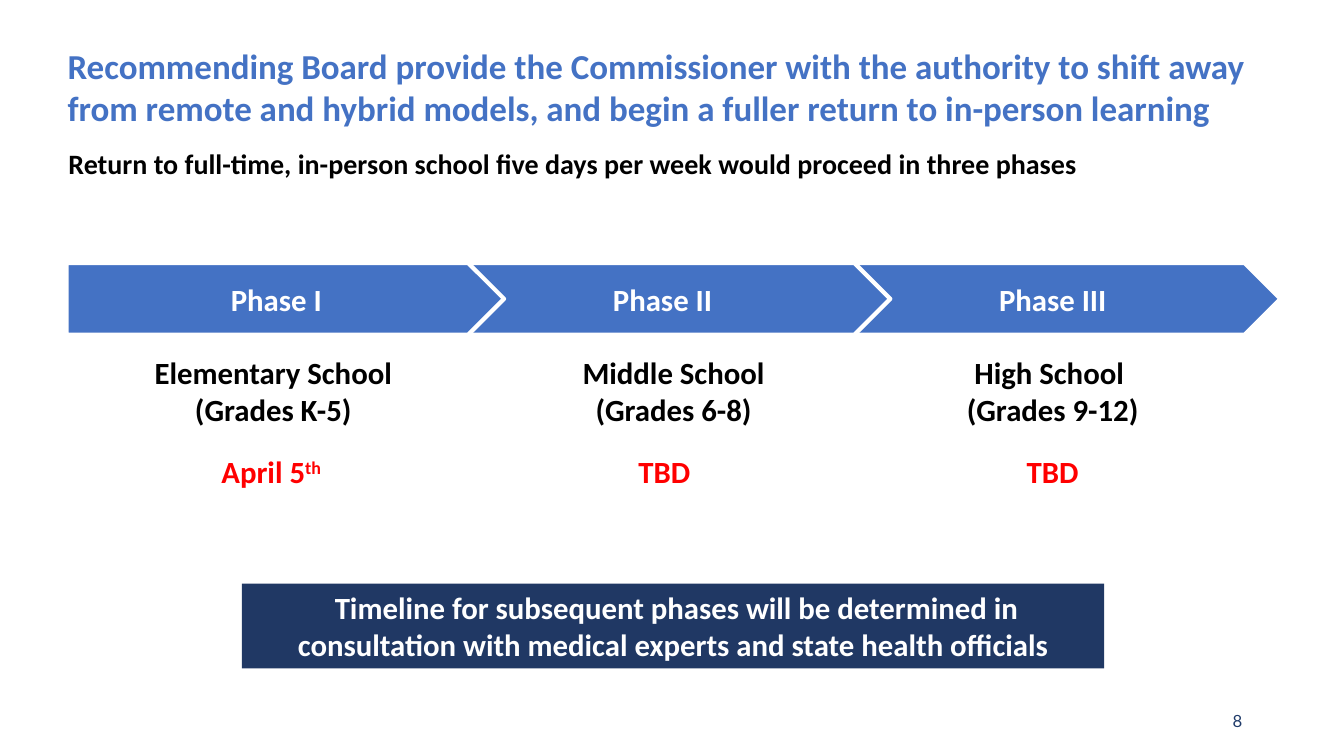
from pptx import Presentation
from pptx.dml.color import RGBColor
from pptx.enum.shapes import MSO_SHAPE
from pptx.enum.text import MSO_ANCHOR, MSO_AUTO_SIZE, PP_ALIGN
from pptx.util import Inches, Pt

TITLE = ("Recommending Board provide the Commissioner with the authority to shift away "
         "from remote and hybrid models, and begin a fuller return to in-person learning")
SUBTITLE = "Return to full-time, in-person school five days per week would proceed in three phases"
# name, arrow left, school text, school centre, date, superscript, date centre
PHASES = [
    ("Phase I", 0.66, "Elementary School (Grades K-5)", 2.71, "April 5", "th ", 2.71),
    ("Phase II", 4.49, "Middle School (Grades 6-8)", 6.68, "TBD", "", 6.59),
    ("Phase III", 8.36, "High School \n(Grades 9-12)", 10.44, "TBD", "", 10.44),
]
NOTE = (" Timeline for subsequent phases will be determined in "
        "consultation with medical experts and state health officials")
PAGE = "8"

COLORS = {"blue": "4472C4", "navy": "203864", "page": "203B6A",
          "white": "FFFFFF", "black": "000000", "red": "FF0000"}
ARROW_W, SCHOOL_W, DATE_W = 4.34, 2.79, 2.2


def rgb(name):
    return RGBColor.from_string(COLORS[name])


def write(shape, text, size, color, align=PP_ALIGN.CENTER, anchor=MSO_ANCHOR.TOP,
          font="Calibri", bold=True):
    tf = shape.text_frame
    tf.text = text
    tf.word_wrap = True
    tf.auto_size = MSO_AUTO_SIZE.NONE
    tf.vertical_anchor = anchor
    for p in tf.paragraphs:
        p.alignment = align
        p.font.name, p.font.size, p.font.bold = font, Pt(size), bold
        p.font.color.rgb = rgb(color)
    return tf


def add_text(x, y, w, h, *args, **kwargs):
    box = s.shapes.add_textbox(Inches(x), Inches(y), Inches(w), Inches(h))
    return write(box, *args, **kwargs)


def add_block(kind, x, y, w, h, text, fill):
    sp = s.shapes.add_shape(kind, Inches(x), Inches(y), Inches(w), Inches(h))
    sp.shadow.inherit = False
    sp.fill.solid()
    sp.fill.fore_color.rgb = rgb(fill)
    sp.line.fill.background()
    write(sp, text, 22, "white", anchor=MSO_ANCHOR.MIDDLE)
    return sp


prs = Presentation()
prs.slide_width, prs.slide_height = Inches(13.33), Inches(7.5)
s = prs.slides.add_slide(prs.slide_layouts[5])

# Title and subtitle
title = s.shapes.title
title.left, title.top = Inches(0.57), Inches(0.39)
title.width, title.height = Inches(12.12), Inches(0.94)
write(title, TITLE, 25, "blue", PP_ALIGN.LEFT)
add_text(0.58, 1.4, 10.42, 0.44, SUBTITLE, 20, "black", PP_ALIGN.LEFT)

# Phase arrows, last first so that each overlaps the next
for name, left, *_ in reversed(PHASES):
    arrow = add_block(MSO_SHAPE.PENTAGON, left, 2.61, ARROW_W, 0.71, name, "blue")
    arrow.line.color.rgb = rgb("white")
    arrow.line.width = Pt(3)

# Schools and dates under the arrows
for _, _, school, school_mid, date, suffix, date_mid in PHASES:
    add_text(school_mid - SCHOOL_W / 2, 3.46, SCHOOL_W, 0.84, school, 22, "black")
    tf = add_text(date_mid - DATE_W / 2, 4.44, DATE_W, 0.47, date, 22, "red")
    if suffix:
        r = tf.paragraphs[0].add_run()
        r.text = suffix
        r.font._element.set("baseline", "30000")

# Timeline note and page number
add_block(MSO_SHAPE.RECTANGLE, 2.4, 5.79, 8.55, 0.84, NOTE, "navy")
add_text(9.42, 6.95, 3, 0.4, PAGE, 12, "page", PP_ALIGN.RIGHT, MSO_ANCHOR.MIDDLE,
         font="Lato", bold=False)

prs.save("out.pptx")
